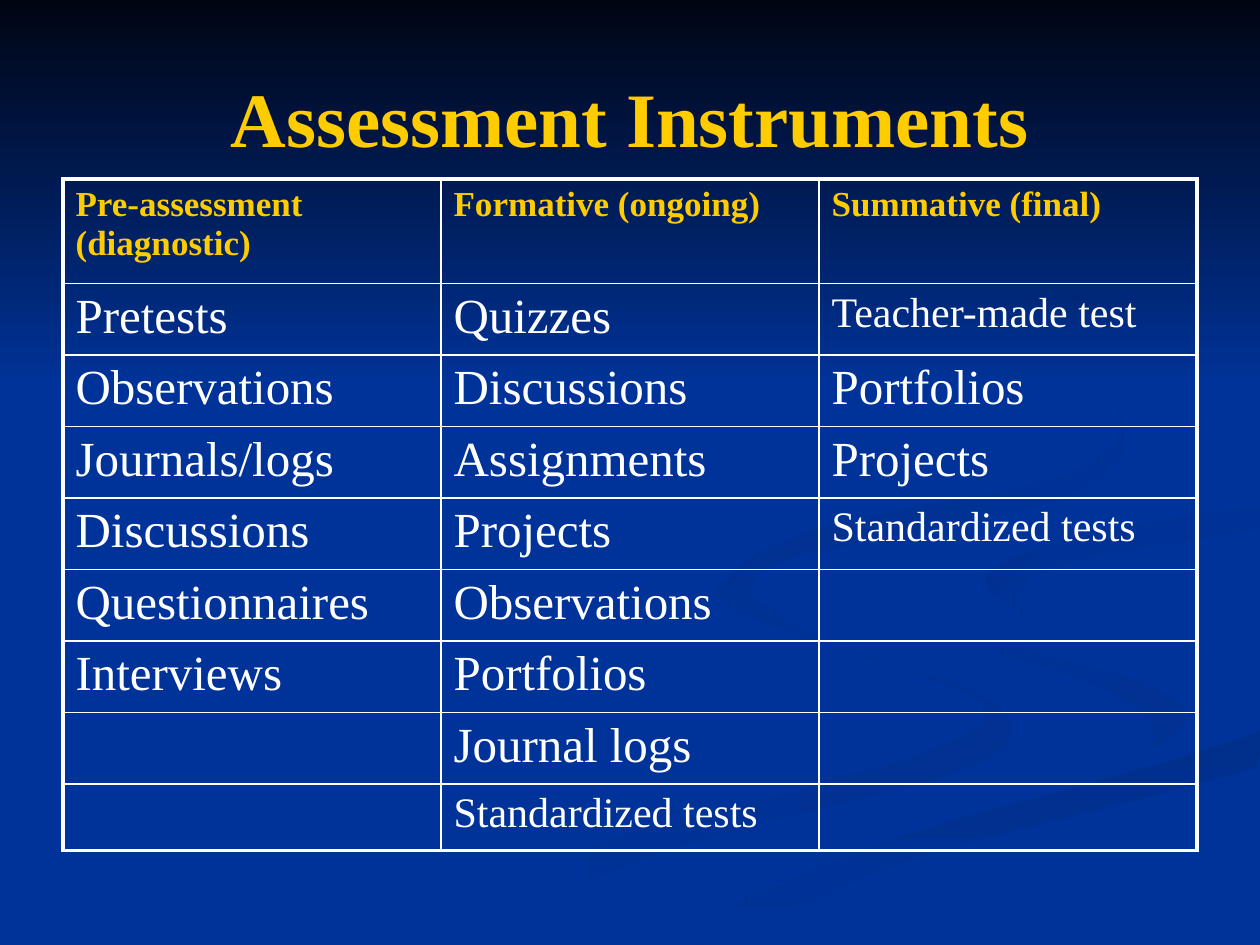
import pptx
import pptx.dml.color
import pptx.enum.shapes
import pptx.enum.text
import pptx.oxml.ns
import pptx.util
import lxml.etree
from dataclasses import dataclass

PX = 9144


@dataclass(frozen=True)
class Theme:
    background: str = "003399"
    night: str = "000514"
    title: str = "FFCC00"
    body: str = "FFFFFF"
    font: str = "Times New Roman"
    title_size: int = 44
    header_size: int = 20
    body_size: int = 28
    compact_size: int = 24
    outer_line: float = 2.25
    inner_line: float = 1


THEME = Theme()
CURVE_STEPS = 4

RIBBONS = [
    (("003399", "003193"), 0, [
        (781, 553), (661, 513), (575, 460), (586, 487), (714, 530), (785, 566),
        (699, 609), (458, 674), (300, 749), (361, 749), (532, 674), (780, 605)]),
    (("003399", "003193"), 45, [
        (943, 570), (888, 535), (758, 498), (724, 464), (755, 505), (880, 549),
        (917, 585), (894, 605)]),
    (("002F8C", "003399"), 90, [
        (503, 749), (571, 749), (722, 682), (998, 609), (998, 581), (764, 647),
        (599, 706)]),
    (("003399",), 0, [
        (725, 464), (775, 503), (905, 540), (943, 570), (892, 605), (663, 668),
        (477, 749), (519, 747), (696, 669), (999, 581), (999, 538), (848, 503),
        (781, 463), (850, 427), (999, 402), (999, 387), (788, 422)]),
    (("003091", "003399"), 45, [
        (781, 460), (826, 496), (805, 472), (859, 443), (998, 420), (998, 402),
        (849, 427)]),
    (("002F8E", "003399"), 45, [
        (683, 430), (841, 396), (894, 344), (843, 275), (762, 233), (846, 279),
        (889, 335), (842, 378), (649, 420), (577, 462), (622, 500), (593, 470),
        (624, 444)]),
]

HEADERS = ["Pre-assessment (diagnostic)", "Formative (ongoing)", "Summative (final)"]
INSTRUMENTS = [
    ["Pretests", "Quizzes", "Teacher-made test"],
    ["Observations", "Discussions", "Portfolios"],
    ["Journals/logs", "Assignments", "Projects"],
    ["Discussions", "Projects", "Standardized tests"],
    ["Questionnaires", "Observations", ""],
    ["Interviews", "Portfolios", ""],
    ["", "Journal logs", ""],
    ["", "Standardized tests", ""],
]
COMPACT = {"Teacher-made test", "Standardized tests"}


def rgb(value):
    return pptx.dml.color.RGBColor.from_string(value)


def emu(*lengths):
    return [pptx.util.Emu(round(length) * PX) for length in lengths]


def blend(before, start, end, after, t):
    return (2 * start + (end - before) * t
            + (2 * before - 5 * start + 4 * end - after) * t ** 2
            + (3 * start - before - 3 * end + after) * t ** 3) / 2


def smooth_outline(knots, width, height):
    points = []
    for index in range(len(knots)):
        near = [knots[(index + offset) % len(knots)] for offset in (-1, 0, 1, 2)]
        for step in range(CURVE_STEPS):
            x, y = [blend(*axis, step / CURVE_STEPS) for axis in zip(*near)]
            points.append((min(x, width), min(y, height)))
    return points


def paint(shape, colors, clockwise=0):
    shape.shadow.inherit = False
    shape.line.fill.background()
    if len(colors) == 1:
        shape.fill.solid()
        shape.fill.fore_color.rgb = rgb(colors[0])
        return
    shape.fill.gradient()
    shape.fill.gradient_angle = (360 - clockwise) % 360
    for stop, color in zip(shape.fill.gradient_stops, colors):
        stop.color.rgb = rgb(color)


def style_text(para, size, color, bold=False):
    for span in para.runs:
        span.font.name = THEME.font
        span.font.size = pptx.util.Pt(size)
        span.font.bold = bold
        span.font.color.rgb = rgb(color)


def draw_backdrop(page, left, top, width, height, sky_height):
    page.background.fill.solid()
    page.background.fill.fore_color.rgb = rgb(THEME.background)
    for colors, angle, knots in RIBBONS:
        points = [emu(left + x, top + y) for x, y in smooth_outline(knots, width, height)]
        builder = page.shapes.build_freeform(*points[0])
        builder.add_line_segments(points[1:], close=True)
        paint(builder.convert_to_shape(), colors, angle)
    sky = page.shapes.add_shape(
        pptx.enum.shapes.MSO_SHAPE.RECTANGLE, *emu(left, top, width, sky_height))
    paint(sky, (THEME.night, THEME.background), 90)


def draw_title(page, left, top, width, height):
    box = page.shapes.add_textbox(*emu(left, top, width, height))
    frame = box.text_frame
    frame.word_wrap = True
    frame.vertical_anchor = pptx.enum.text.MSO_ANCHOR.MIDDLE
    frame.text = "Assessment Instruments"
    para = frame.paragraphs[0]
    para.alignment = pptx.enum.text.PP_ALIGN.CENTER
    style_text(para, THEME.title_size, THEME.title, True)


def add_borders(cell, outer_sides):
    properties = cell._tc.get_or_add_tcPr()
    for side in "LRTB":
        points = THEME.outer_line if side in outer_sides else THEME.inner_line
        line = lxml.etree.SubElement(
            properties, pptx.oxml.ns.qn("a:ln" + side), w=str(int(pptx.util.Pt(points))))
        fill = lxml.etree.SubElement(line, pptx.oxml.ns.qn("a:solidFill"))
        lxml.etree.SubElement(fill, pptx.oxml.ns.qn("a:srgbClr"), val=THEME.body)


def draw_table(page, left, top, width, header_height, row_height):
    rows = [HEADERS] + INSTRUMENTS
    last_row, last_column = len(rows) - 1, len(HEADERS) - 1
    height = header_height + row_height * last_row
    table = page.shapes.add_table(
        len(rows), len(HEADERS), *emu(left, top, width, height)).table
    table.first_row = table.horz_banding = False
    for index, texts in enumerate(rows):
        is_header = index == 0
        table.rows[index].height = emu(header_height if is_header else row_height)[0]
        for column, text in enumerate(texts):
            cell = table.cell(index, column)
            edges = {"L": column == 0, "R": column == last_column,
                     "T": is_header, "B": index == last_row}
            add_borders(cell, [side for side, outer in edges.items() if outer])
            cell.fill.background()
            cell.text_frame.text = text
            size = THEME.compact_size if text in COMPACT else THEME.body_size
            style_text(cell.text_frame.paragraphs[0],
                       THEME.header_size if is_header else size,
                       THEME.title if is_header else THEME.body, is_header)


def main():
    deck = pptx.Presentation()
    deck.slide_width, deck.slide_height = emu(1000, 750)
    page = deck.slides.add_slide(deck.slide_layouts[6])
    draw_backdrop(page, 0, 0, 1000, 750, 308)
    draw_title(page, 50, 30, 900, 125)
    draw_table(page, 50, 142, 900, 83, 53)
    deck.save("out.pptx")


if __name__ == "__main__":
    main()
